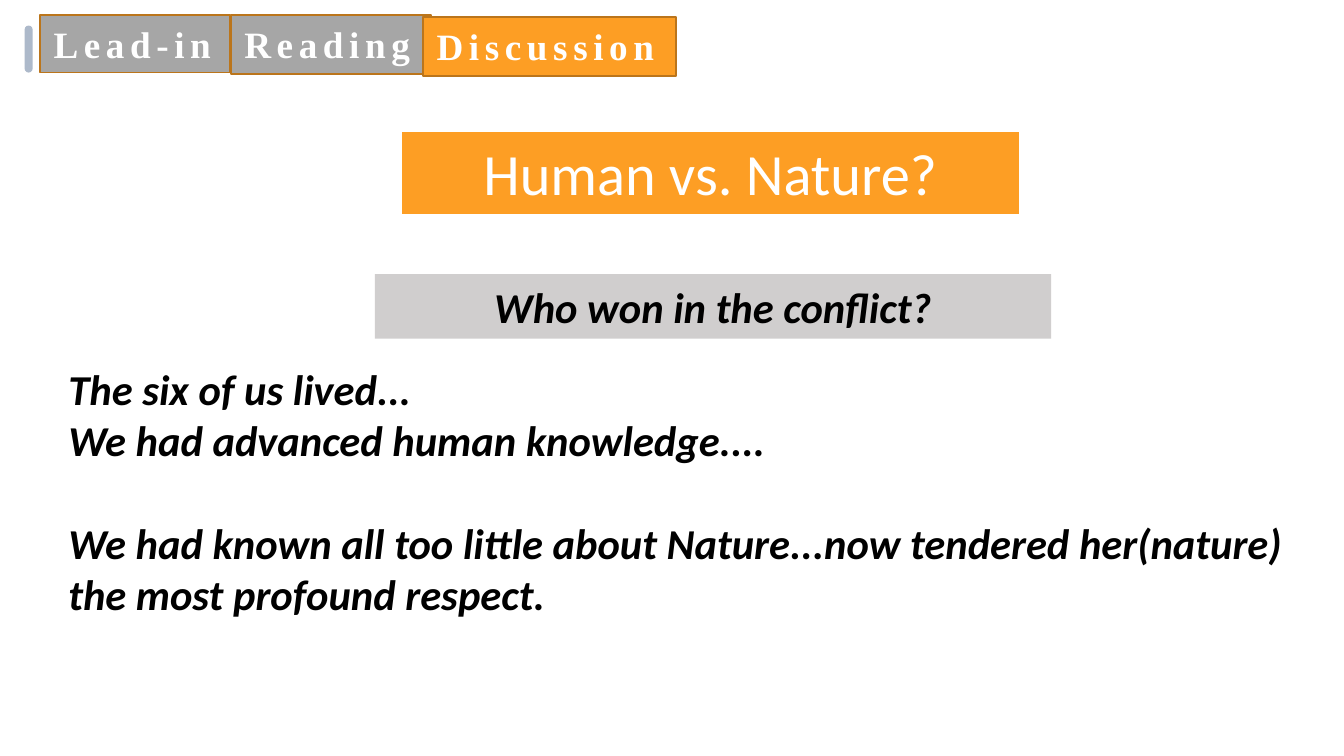
from pptx import Presentation
from pptx.dml.color import RGBColor
from pptx.enum.shapes import MSO_SHAPE
from pptx.enum.text import MSO_ANCHOR, MSO_AUTO_SIZE, PP_ALIGN
from pptx.util import Pt

RECT, ROUND = MSO_SHAPE.RECTANGLE, MSO_SHAPE.ROUNDED_RECTANGLE
LEFT, MID = PP_ALIGN.LEFT, PP_ALIGN.CENTER
TOP, GROW = MSO_ANCHOR.TOP, MSO_AUTO_SIZE.SHAPE_TO_FIT_TEXT

COLORS = {
    "white": "FFFFFF", "black": "000000", "orange": "FD9E24",
    "brown": "BB751B", "gray": "A6A6A6", "pale": "D0CECE", "blue": "ADB9CA",
}

# Text styles: font, size, color, bold, italic, letter spacing
TAB = ("Times New Roman", 19.9, "white", True, False, 3)
TITLE = ("Calibri", 31.3, "white", False, False, 0)
BODY = ("Calibri", 22.8, "black", True, True, 0)

# Boxes: left, top, width, height in points
MARK = (13.2, 13.7, 4.3, 25.2)
TITLE_BOX = (214.6, 69.8, 331.9, 45.4)
ASK_BOX = (200.9, 146.9, 362.2, 34.6)
BODY_BOX = (29.5, 190.8, 666, 145.4)

# Tabs from back to front: text, box, fill
TABS = [
    ("Reading", (123.8, 7.9, 107.3, 31.7), "gray"),
    ("Discussion", (226.8, 9.2, 135.4, 31.7), "orange"),
    ("Lead-in", (21.6, 7.9, 101.5, 31), "gray"),
]
TITLE_TEXT = "Human vs. Nature?"
ASK = "Who won in the conflict?"
# Lines with the space before each
LINES = [
    ("The six of us lived...", 0),
    ("We had advanced human knowledge....", 0),
    ("We had known all too little about Nature...now tendered "
     "her(nature) the most profound respect.", 27.8),
]


def color(name):
    return RGBColor.from_string(COLORS[name])


def add_box(kind, box, fill, line=None, width=1):
    shape = slide.shapes.add_shape(kind, *(Pt(v) for v in box))
    shape.shadow.inherit = False
    shape.fill.solid()
    shape.fill.fore_color.rgb = color(fill)
    if line:
        shape.line.color.rgb = color(line)
        shape.line.width = Pt(width)
    else:
        shape.line.fill.background()
    return shape


def write(shape, lines, style, align=LEFT, wrap=True):
    """Fill a shape with (text, space before) lines in one style."""
    face, size, ink, bold, slant, track = style
    frame = shape.text_frame
    frame.text = "\n".join(text for text, gap in lines)
    frame.word_wrap = wrap
    frame.auto_size = GROW
    frame.vertical_anchor = TOP
    for para, (text, gap) in zip(frame.paragraphs, lines):
        para.alignment = align
        para.space_before = Pt(gap)
        for run in para.runs:
            font = run.font
            font.name, font.size = face, Pt(size)
            font.bold, font.italic = bold, slant
            font.color.rgb = color(ink)
            if track:
                run._r.get_or_add_rPr().set("spc", str(track * 100))


prs = Presentation()
prs.slide_width, prs.slide_height = Pt(720), Pt(405)
slide = prs.slides.add_slide(prs.slide_layouts[6])

mark = add_box(ROUND, MARK, "blue")
mark.adjustments[0] = 0.5
for text, box, fill in TABS:
    write(add_box(RECT, box, fill, "brown"), [(text, 0)], TAB, wrap=False)
title = add_box(RECT, TITLE_BOX, "orange", "white", 1.5)
write(title, [(TITLE_TEXT, 0)], TITLE, MID)
write(add_box(RECT, ASK_BOX, "pale"), [(ASK, 0)], BODY, MID)
write(add_box(RECT, BODY_BOX, "white"), LINES, BODY)

prs.save("out.pptx")
